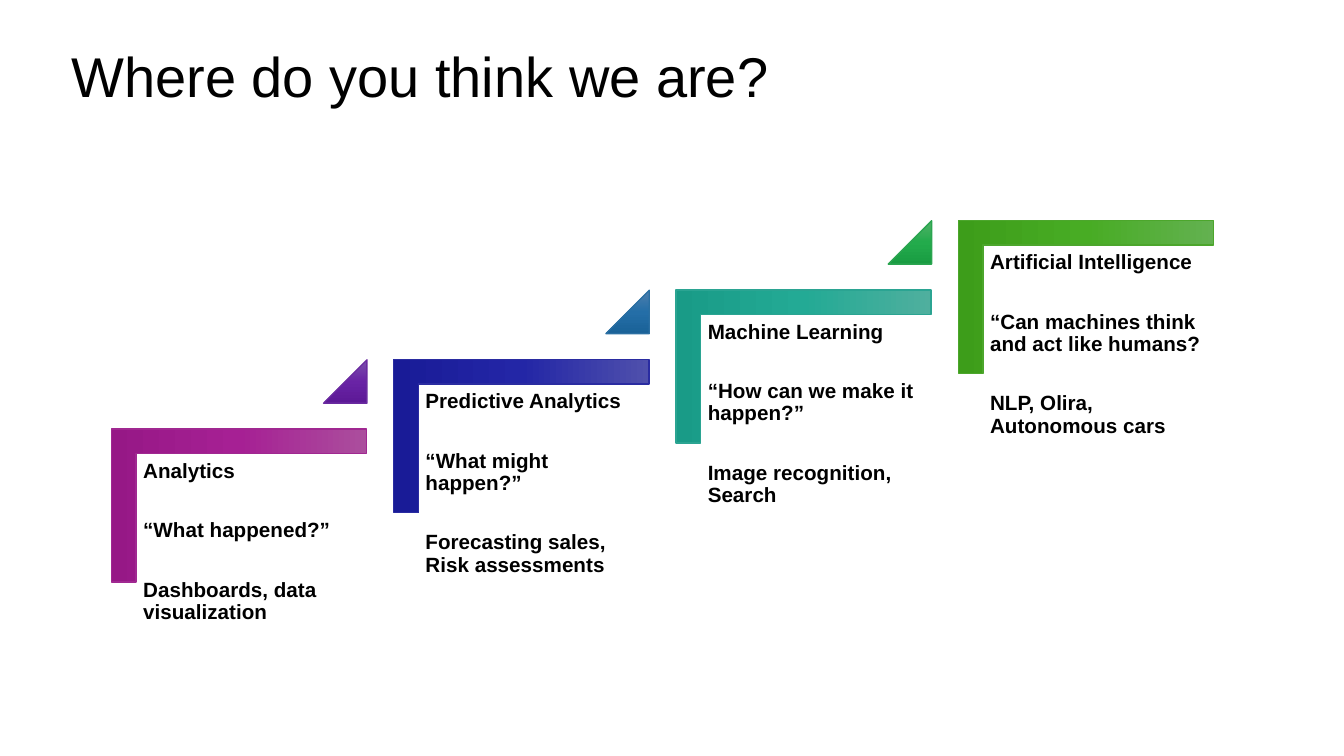
from pptx import Presentation
from pptx.dml.color import RGBColor
from pptx.enum.shapes import MSO_SHAPE
from pptx.oxml import parse_xml
from pptx.oxml.ns import nsdecls
from pptx.util import Inches, Pt

CORNER = MSO_SHAPE.CORNER
WEDGE = MSO_SHAPE.ISOSCELES_TRIANGLE
FONT = "Arial"
LEFT, TOP = 1.36, 3.75
STEP, RISE = 2.8, 0.69

STAIRS = [
    (["Analytics", "“What happened?”", "Dashboards, data visualization"],
     ("AB4E9D", "A62094", "961886", "A02891"),
     ("7B4FAB", "6923A5", "5C1996", "6A2AA0")),
    (["Predictive Analytics", "“What might happen?”",
      "Forecasting sales, Risk assessments"],
     ("4F50AC", "2326A6", "191B97", "2A2CA1"),
     ("4F7FAD", "246EA7", "1A6298", "2B6FA2")),
    (["Machine Learning", "“How can we make it happen?”",
      "Image recognition, Search"],
     ("4FAF9E", "23AA95", "199B87", "2BA492"),
     ("4FB066", "23AB4C", "199C42", "2BA550")),
    (["Artificial Intelligence", "“Can machines think and act like humans?",
      "NLP, Olira, Autonomous cars"],
     ("63B150", "48AC24", "3D9D1A", "4CA62C"),
     None),
]


def color(code):
    return RGBColor.from_string(code)


def shade(shape, tones):
    stops = "".join(
        f'<a:gs pos="{i * 50000}"><a:srgbClr val="{tone}"/></a:gs>'
        for i, tone in enumerate(tones))
    shape._element.spPr.insert(2, parse_xml(
        f'<a:gradFill {nsdecls("a")} rotWithShape="1"><a:gsLst>{stops}</a:gsLst>'
        '<a:lin ang="5400000" scaled="0"/></a:gradFill>'))


def add_form(slide, kind, box, tones, bends, turn=0):
    shape = slide.shapes.add_shape(kind, *map(Inches, box))
    shape.rotation = turn
    for i, bend in enumerate(bends):
        shape.adjustments[i] = bend
    shape.shadow.inherit = False
    shape.line.color.rgb = color(tones[3])
    shape.line.width = Pt(1)
    shade(shape, tones[:3])


def add_text(slide, box, lines, size, pads, bold=False, gap=0):
    frame = slide.shapes.add_textbox(*map(Inches, box)).text_frame
    frame.word_wrap = True
    frame.margin_left = frame.margin_right = Inches(pads[0])
    frame.margin_top = frame.margin_bottom = Inches(pads[1])
    for i, line in enumerate(lines):
        para = frame.add_paragraph() if i else frame.paragraphs[0]
        para.text = line
        para.line_spacing = 0.9
        if i:
            para.space_before = Pt(gap)
        para.font.name = FONT
        para.font.size = Pt(size)
        para.font.bold = bold
        para.font.color.rgb = color("000000")


def add_stair(slide, col, lines, tones, wedge):
    x, y = LEFT + col * STEP, TOP - col * RISE
    add_form(slide, CORNER, (x + 0.25, y, 1.52, 2.53), tones,
             (0.161, 0.161), 90)
    add_text(slide, (x, y + 0.76, 2.28, 2), lines, 14.7, (0.06, 0.06),
             True, 26.5)
    if wedge:
        add_form(slide, WEDGE, (x + 1.85, y - 0.18, 0.43, 0.43), wedge, (1,))


def main():
    deck = Presentation()
    deck.slide_width, deck.slide_height = Inches(13.33), Inches(7.5)
    slide = deck.slides.add_slide(deck.slide_layouts[6])
    add_text(slide, (0.61, 0.44, 7.8, 1.1), ["Where do you think we are?"],
             40, (0.1, 0.05))
    for col, stair in enumerate(STAIRS):
        add_stair(slide, col, *stair)
    deck.save("out.pptx")


if __name__ == "__main__":
    main()
